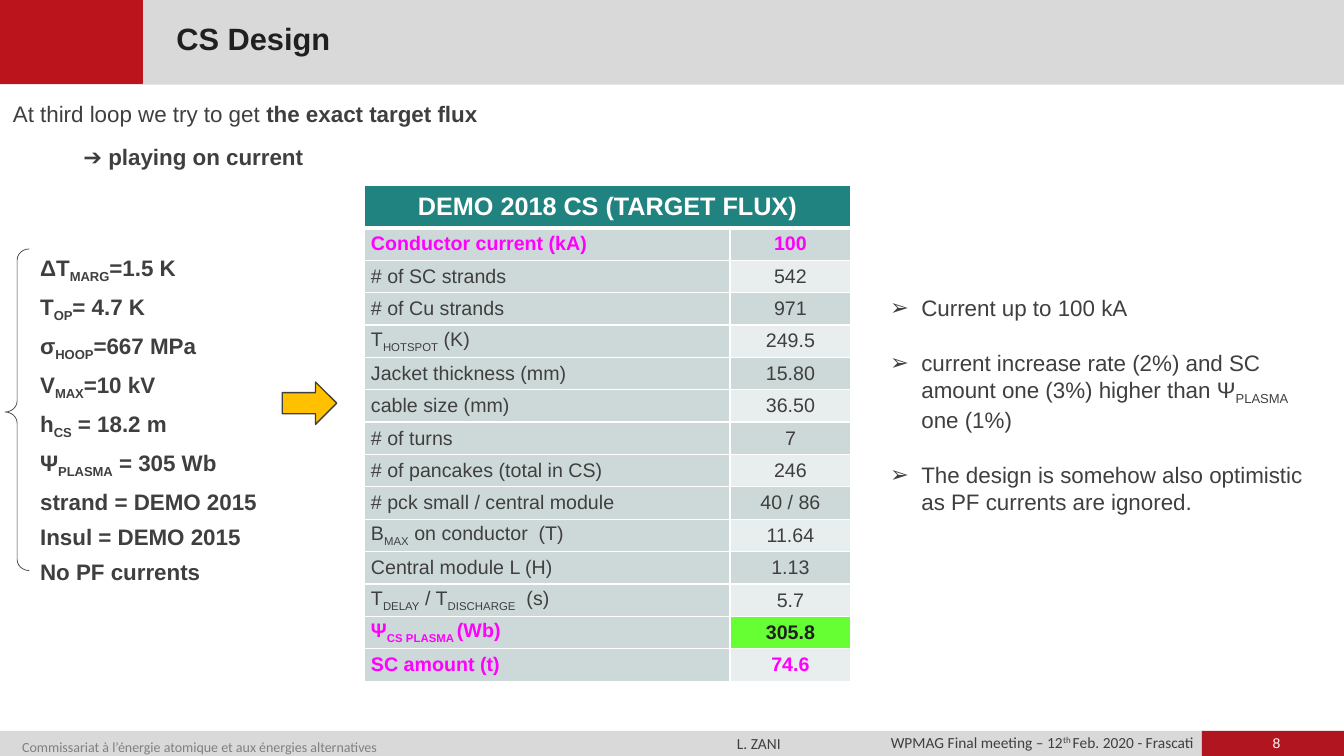
from collections import namedtuple
from dataclasses import dataclass

from lxml import etree
from pptx import Presentation
from pptx import util as u
from pptx.dml.color import RGBColor
from pptx.enum import shapes, text
from pptx.oxml.ns import qn


@dataclass(frozen=True)
class Theme:
    ink: str = "3F3F3F"
    dark: str = "202020"
    white: str = "FFFFFF"
    grey: str = "808080"
    band: str = "D9D9D9"
    title_red: str = "BC141C"
    page_red: str = "B1151F"
    teal: str = "218380"
    mint: str = "CDD9D8"
    pale: str = "E8EDED"
    magenta: str = "FF00FF"
    green: str = "66FF33"
    amber: str = "FFC000"
    title: int = 22
    table_head: int = 18
    body: int = 16
    cell: int = 14
    footer: int = 11
    small: int = 10
    font: str = "Arial"
    footer_font: str = "Calibri"


THEME = Theme()
Box = namedtuple("Box", "x y w h")
ALIGN = text.PP_ALIGN
SHAPE = shapes.MSO_SHAPE

CONDITIONS = [
    "ΔT~MARG~=1.5 K", "T~OP~= 4.7 K", "σ~HOOP~=667 MPa", "V~MAX~=10 kV",
    "h~CS~ = 18.2 m", "Ψ~PLASMA~ = 305 Wb", "strand = DEMO 2015",
    "Insul = DEMO 2015", "No PF currents",
]
DESIGN = [
    ("Conductor current (kA)", "100"),
    ("# of SC strands", "542"),
    ("# of Cu strands", "971"),
    ("T~HOTSPOT~ (K)", "249.5"),
    ("Jacket thickness (mm)", "15.80"),
    ("cable size (mm)", "36.50"),
    ("# of turns", "7"),
    ("# of pancakes (total in CS)", "246"),
    ("# pck small / central module", "40 / 86"),
    ("B~MAX~ on conductor  (T)", "11.64"),
    ("Central module L (H)", "1.13"),
    ("T~DELAY~ / T~DISCHARGE~  (s)", "5.7"),
    ("Ψ~CS PLASMA ~(Wb)", "305.8"),
    ("SC amount (t)", "74.6"),
]
KEY_ROWS = {1, 13, 14}
TARGET_ROW = 13
FINDINGS = [
    "Current up to 100 kA",
    "current increase rate (2%) and SC amount one (3%) higher than Ψ~PLASMA~ one (1%)",
    "The design is somehow also optimistic as PF currents are ignored.",
]


def rgb(value):
    return RGBColor.from_string(value)


def place(box):
    return [u.Inches(length) for length in box]


def write(paragraph, markup, size, color=THEME.ink, bold=False, font=THEME.font,
          align=ALIGN.LEFT, baseline=-25000):
    paragraph.alignment = align
    for index, part in enumerate(markup.split("~")):
        if not part:
            continue
        run = paragraph.add_run()
        run.text = part
        run.font.size = u.Pt(size)
        run.font.name = font
        run.font.bold = bold
        run.font.color.rgb = rgb(color)
        if index % 2:
            run._r.get_or_add_rPr().set("baseline", str(baseline))


def add_text(slide, box, lines, size, gap=0, inset=(0.1, 0.05), wrap=True, spacing=None, **style):
    frame = slide.shapes.add_textbox(*place(box)).text_frame
    frame.word_wrap = wrap
    frame.margin_left = frame.margin_right = u.Inches(inset[0])
    frame.margin_top = frame.margin_bottom = u.Inches(inset[1])
    for index, line in enumerate(lines):
        paragraph = frame.add_paragraph() if index else frame.paragraphs[0]
        if index:
            paragraph.space_before = u.Pt(gap)
        if spacing:
            paragraph.line_spacing = spacing
        write(paragraph, line, size, **style)
    return frame


def add_block(slide, kind, box, fill=None, line=None, width=1):
    block = slide.shapes.add_shape(kind, *place(box))
    block.shadow.inherit = False
    if fill:
        block.fill.solid()
        block.fill.fore_color.rgb = rgb(fill)
    else:
        block.fill.background()
    if line:
        block.line.color.rgb = rgb(line)
        block.line.width = u.Pt(width)
    else:
        block.line.fill.background()
    return block


def indent(paragraph, left, first=0, bullet=None):
    properties = paragraph._p.get_or_add_pPr()
    properties.set("marL", str(u.Inches(left)))
    properties.set("indent", str(u.Inches(first)))
    if bullet:
        etree.SubElement(properties, qn("a:buFont")).set("typeface", THEME.font)
        etree.SubElement(properties, qn("a:buChar")).set("char", bullet)


def header(slide, box):
    add_block(slide, SHAPE.RECTANGLE, box, THEME.band)
    add_block(slide, SHAPE.RECTANGLE, Box(box.x - 0.01, box.y, 1.42, 0.86),
              THEME.title_red, THEME.title_red)
    title = add_text(slide, Box(box.x + 1.61, box.y + 0.24, 6.41, 0.41), ["CS Design"],
                     THEME.title, inset=(0.14, 0.05), spacing=0.8, color=THEME.dark, bold=True)
    title.vertical_anchor = text.MSO_ANCHOR.MIDDLE


def footer(slide, box):
    add_block(slide, SHAPE.RECTANGLE, box, THEME.band)
    add_block(slide, SHAPE.RECTANGLE, Box(box.x + 11.92, box.y, 1.42, box.h), THEME.page_red)
    inset = (0.08, 0)
    calibri = {"inset": inset, "font": THEME.footer_font}
    add_text(slide, Box(box.x + 8.58, box.y + 0.04, 3.34, 0.17),
             ["WPMAG Final meeting – 12~th ~Feb. 2020 - Frascati"], THEME.footer,
             spacing=0.9, align=ALIGN.RIGHT, baseline=30000, **calibri)
    add_text(slide, Box(box.x + 0.14, box.y + 0.01, 6.03, 0.21),
             ["Commissariat à l’énergie atomique et aux énergies alternatives"],
             THEME.small, spacing=1.4, color=THEME.grey, **calibri)
    add_text(slide, Box(box.x + 7.23, box.y + 0.03, 0.6, 0.19), ["L. ZANI"],
             THEME.footer, wrap=False, **calibri)
    add_text(slide, Box(box.x + 12.2, box.y + 0.04, 0.92, 0.17), ["8"], THEME.small,
             inset=inset, color=THEME.white, align=ALIGN.CENTER)


def introduction(slide, box):
    frame = add_text(slide, box, ["At third loop we try to get ~the exact target flux",
                                  "➔ ~playing on current"], THEME.body, gap=6,
                     spacing=u.Pt(25), align=ALIGN.JUSTIFY, baseline=0)
    for paragraph in frame.paragraphs:
        paragraph.runs[1].font.bold = True
    indent(frame.paragraphs[1], 0.7)


def conditions(slide, box):
    add_text(slide, Box(box.x + 0.25, box.y, 2.64, box.h), CONDITIONS, THEME.body,
             gap=6, bold=True)
    brace = add_block(slide, SHAPE.LEFT_BRACE, Box(box.x, box.y, 0.24, box.h),
                      line=THEME.ink, width=0.5)
    brace.adjustments[0] = 0.46
    brace.adjustments[1] = 0.507
    add_block(slide, SHAPE.RIGHT_ARROW, Box(box.x + 2.75, box.y + 1.32, 0.54, 0.42),
              THEME.amber, THEME.ink)


def style_cell(cell, fill, margin, top=1, bottom=1):
    cell.vertical_anchor = text.MSO_ANCHOR.MIDDLE
    cell.margin_left = cell.margin_right = u.Inches(margin)
    cell.margin_top = cell.margin_bottom = 0
    properties = cell._tc.get_or_add_tcPr()
    for side, width in (("L", 1), ("R", 1), ("T", top), ("B", bottom)):
        border = etree.SubElement(properties, qn("a:ln" + side), w=str(u.Pt(width)))
        paint = etree.SubElement(border, qn("a:solidFill"))
        etree.SubElement(paint, qn("a:srgbClr"), val=THEME.white)
    cell.fill.solid()
    cell.fill.fore_color.rgb = rgb(fill)


def design_table(slide, box):
    table = slide.shapes.add_table(len(DESIGN) + 1, 2, *place(box)).table
    table.columns[0].width = u.Inches(box.w - 1.2)
    table.columns[1].width = u.Inches(1.2)
    table.rows[0].height = u.Inches(0.42)
    for column in range(2):
        style_cell(table.cell(0, column), THEME.teal, 0.07, bottom=3)
    table.cell(0, 0).merge(table.cell(0, 1))
    write(table.cell(0, 0).text_frame.paragraphs[0], "DEMO 2018 CS (TARGET FLUX)",
          THEME.table_head, THEME.white, True, align=ALIGN.CENTER)
    for row, (label, value) in enumerate(DESIGN, 1):
        table.rows[row].height = u.Inches((box.h - 0.42) / len(DESIGN))
        key = row in KEY_ROWS
        target = row == TARGET_ROW
        color = THEME.magenta if key else THEME.ink
        value_fill = THEME.green if target else THEME.mint if row % 2 else THEME.pale
        top = 3 if row == 1 else 1
        label_cell, value_cell = table.cell(row, 0), table.cell(row, 1)
        style_cell(label_cell, THEME.mint, 0.07, top)
        style_cell(value_cell, value_fill, 0, top)
        write(label_cell.text_frame.paragraphs[0], label, THEME.cell, color, key)
        write(value_cell.text_frame.paragraphs[0], value, THEME.cell,
              THEME.dark if target else color, key, align=ALIGN.CENTER)


def findings(slide, box):
    frame = add_text(slide, box, FINDINGS, THEME.body, gap=20)
    for paragraph in frame.paragraphs:
        indent(paragraph, 0.31, -0.31, "➢")


def main():
    deck = Presentation()
    deck.slide_width, deck.slide_height = u.Inches(13.33), u.Inches(7.5)
    slide = deck.slides.add_slide(deck.slide_layouts[6])
    footer(slide, Box(0, 7.25, 13.33, 0.26))
    header(slide, Box(0, -0.03, 13.33, 0.87))
    introduction(slide, Box(0.03, 0.86, 9.76, 0.89))
    conditions(slide, Box(0.05, 2.47, 3.29, 3.19))
    design_table(slide, Box(3.61, 1.84, 4.83, 4.92))
    findings(slide, Box(8.73, 2.87, 4.37, 2.43))
    deck.save("out.pptx")


if __name__ == "__main__":
    main()
